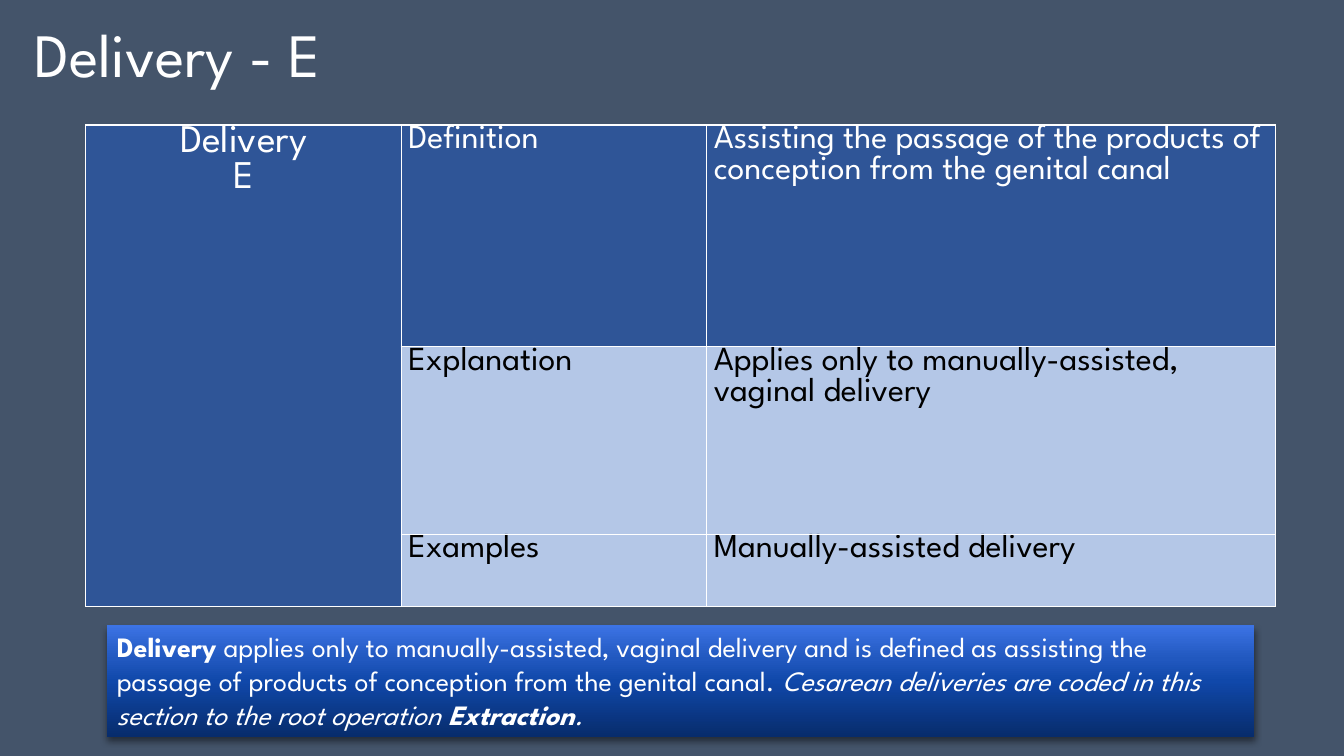
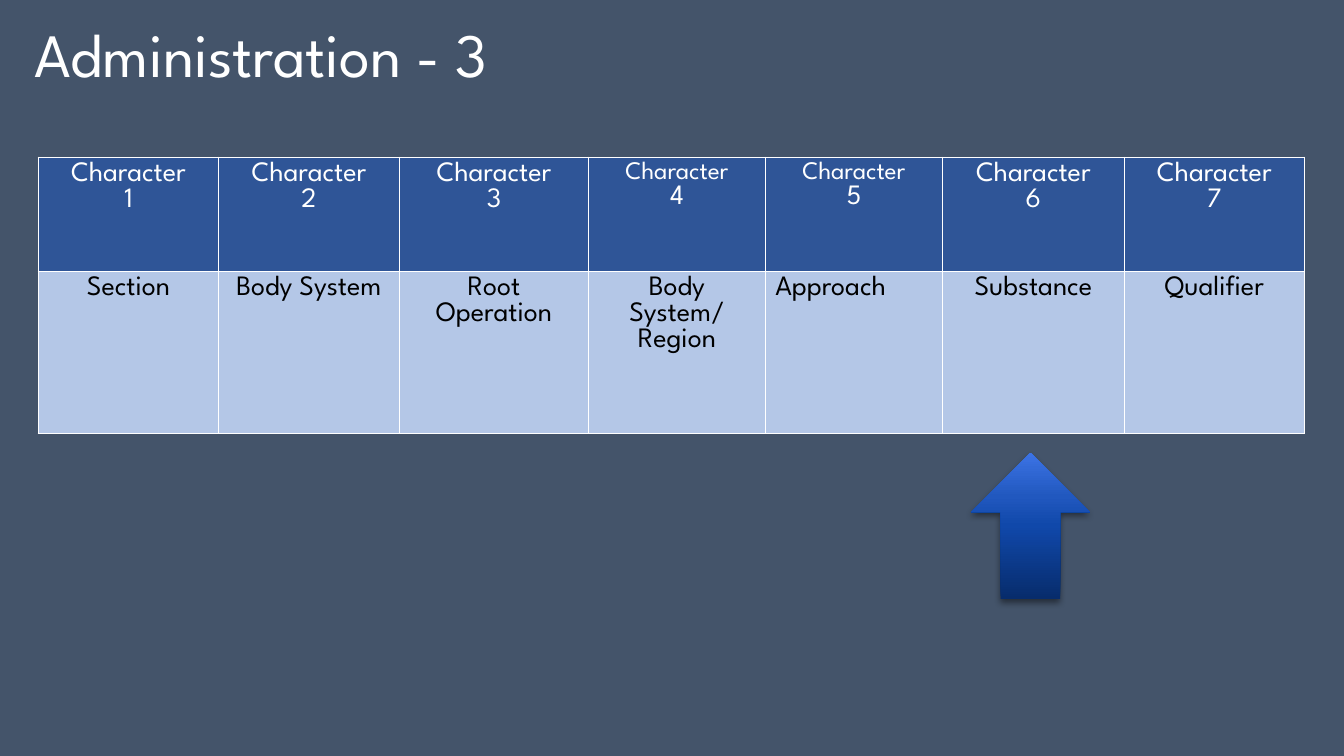
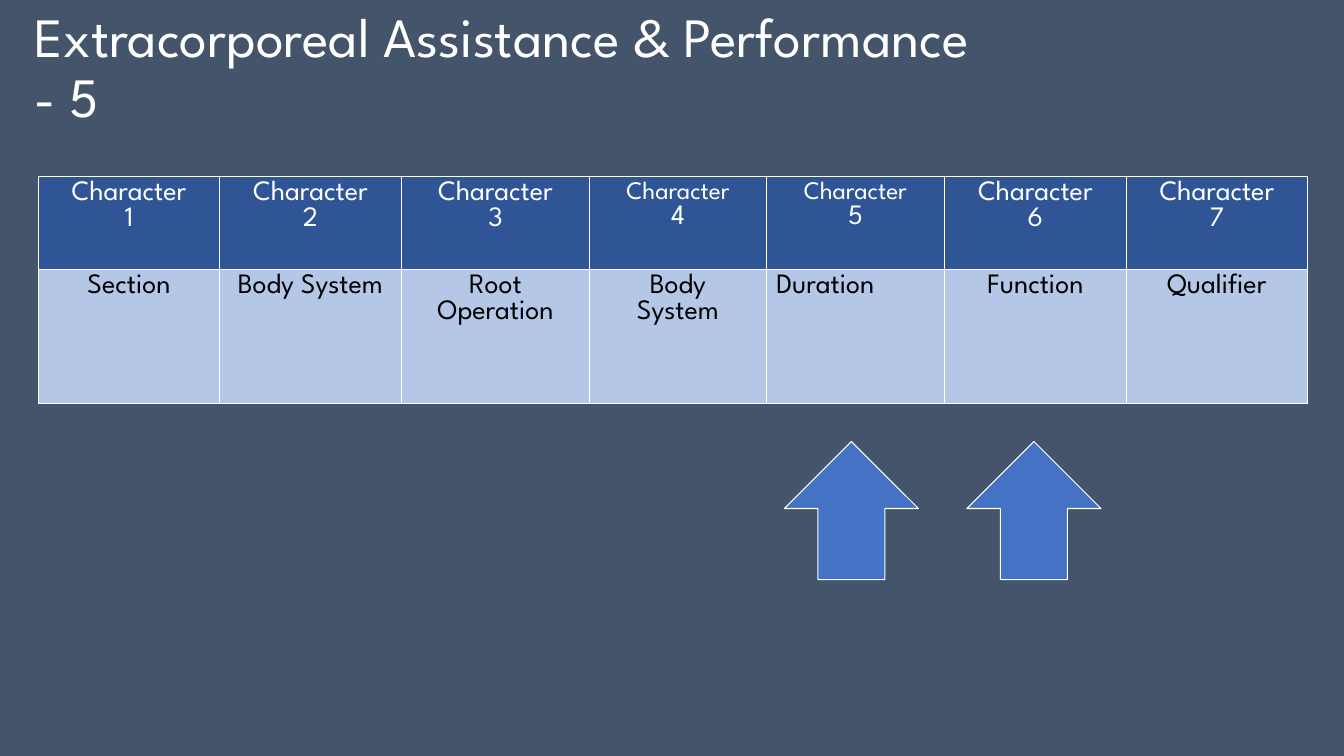
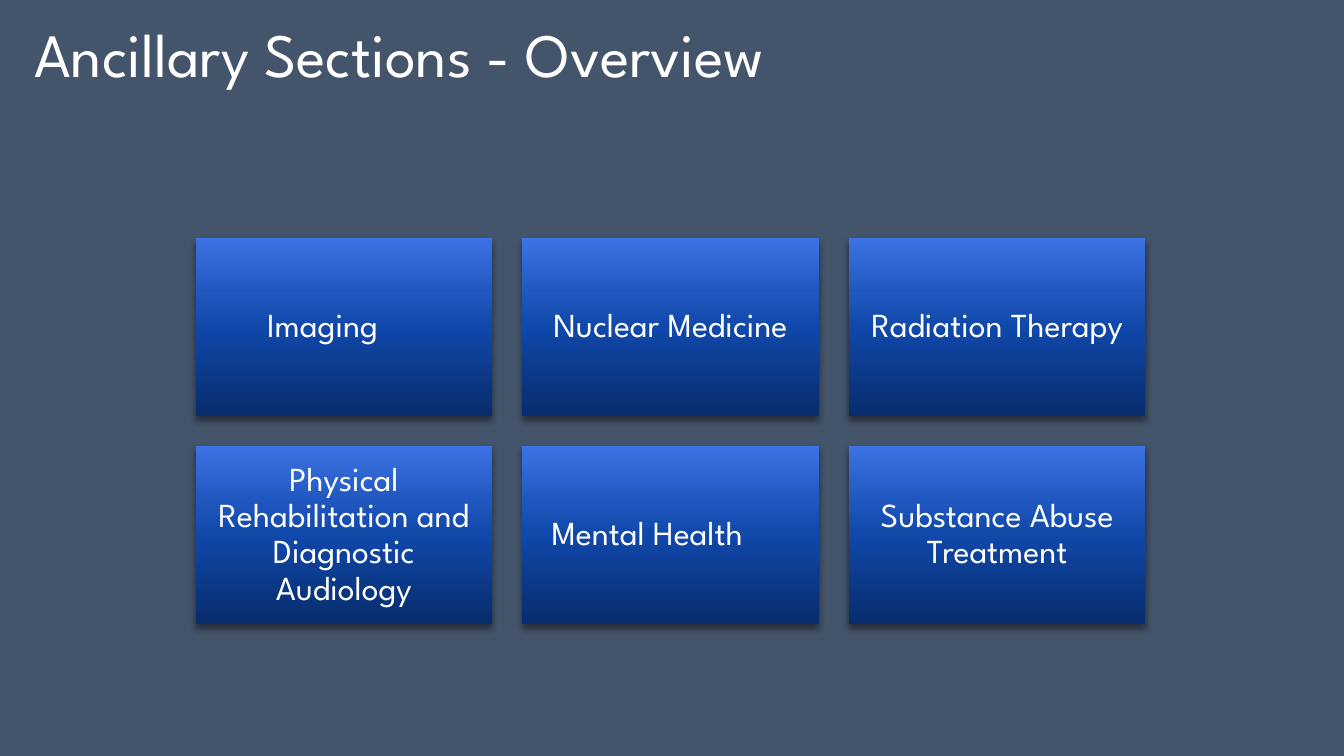
import dataclasses
import itertools
import typing

import lxml.etree
import pptx
import pptx.dml.color
import pptx.enum.shapes
import pptx.enum.text
import pptx.oxml
import pptx.oxml.ns
import pptx.util

PX = 9144
FONT = "League Spartan"
HUES = {
    "back": "44546A",
    "head": "2F5597",
    "body": "B4C7E7",
    "arrow": "4472C4",
    "white": "FFFFFF",
    "black": "000000",
}
GLOW = {0: "072C6C", 50: "1048AA", 70: "2158BF", 100: "3C73E5"}
TIGHT = 0.92
FORM = pptx.enum.shapes.MSO_SHAPE
ALIGN = pptx.enum.text.PP_ALIGN
ANCHOR = pptx.enum.text.MSO_ANCHOR
FIT = pptx.enum.text.MSO_AUTO_SIZE


@dataclasses.dataclass(frozen=True)
class Box:
    x: int
    y: int
    w: int
    h: int

    def emu(self) -> list[int]:
        return [side * PX for side in dataclasses.astuple(self)]


@dataclasses.dataclass(frozen=True)
class Run:
    text: str
    size: float
    hue: str = "white"
    bold: bool = False
    slant: bool = False


@dataclasses.dataclass(frozen=True)
class Cell:
    lines: tuple[Run, ...]
    fill: str
    align: typing.Any = ALIGN.CENTER


@dataclasses.dataclass(frozen=True)
class Card:
    text: str
    shift: int = 0


def tint(hue: str) -> pptx.dml.color.RGBColor:
    return pptx.dml.color.RGBColor.from_string(HUES[hue])


def node(tag: str, body: str, attrs: str = "") -> lxml.etree._Element:
    space = pptx.oxml.ns.nsdecls("a")
    return pptx.oxml.parse_xml(f"<a:{tag} {space} {attrs}>{body}</a:{tag}>")


def write(para, runs: typing.Iterable[Run], align=ALIGN.LEFT, gap=None) -> None:
    para.alignment = align
    if gap:
        para.line_spacing = gap
    for run in runs:
        part = para.add_run()
        part.text = run.text
        font = part.font
        font.name, font.size = FONT, pptx.util.Pt(run.size)
        font.bold, font.italic = run.bold, run.slant
        font.color.rgb = tint(run.hue)


def add_page(deck, title: str, size: float = 44, high: int = 91):
    page = deck.slides.add_slide(deck.slide_layouts[5])
    head = page.shapes.title
    head.left, head.top, head.width, head.height = Box(24, 12, 972, high).emu()
    frame = head.text_frame
    frame.word_wrap = True
    frame.auto_size = FIT.NONE
    frame.vertical_anchor = ANCHOR.MIDDLE
    write(frame.paragraphs[0], [Run(title, size)], gap=0.9)
    return page


def add_form(page, kind, box: Box):
    form = page.shapes.add_shape(kind, *box.emu())
    form.shadow.inherit = False
    return form


def add_glow(page, kind, box: Box):
    form = add_form(page, kind, box)
    form.line.fill.background()
    form.fill.background()
    props = form.fill._xPr
    stops = "".join(
        f'<a:gs pos="{spot * 1000}"><a:srgbClr val="{hue}"/></a:gs>'
        for spot, hue in GLOW.items()
    )
    blend = node("gradFill", f'<a:gsLst>{stops}</a:gsLst><a:lin ang="16200000" scaled="0"/>')
    props.replace(props.find(pptx.oxml.ns.qn("a:noFill")), blend)
    shade = node(
        "outerShdw",
        f'<a:srgbClr val="{HUES["black"]}"><a:alpha val="45000"/></a:srgbClr>',
        'blurRad="63500" dist="38100" dir="5400000" algn="ctr" rotWithShape="0"',
    )
    props.find(pptx.oxml.ns.qn("a:effectLst")).append(shade)
    return form


def style(spot, cell: Cell, pad: tuple[int, int]) -> None:
    spot.fill.solid()
    spot.fill.fore_color.rgb = tint(cell.fill)
    spot.margin_left = spot.margin_right = pad[0] * PX
    spot.margin_top = spot.margin_bottom = pad[1] * PX
    props = spot._tc.get_or_add_tcPr()
    line = f'<a:solidFill><a:srgbClr val="{HUES["white"]}"/></a:solidFill>'
    for rank, side in enumerate("LRTB"):
        props.insert(rank, node(f"ln{side}", line, 'w="12700"'))
    frame = spot.text_frame
    for rank, run in enumerate(cell.lines):
        para = frame.add_paragraph() if rank else frame.paragraphs[0]
        write(para, [run], cell.align, pptx.util.Pt(round(run.size * TIGHT, 2)))


def add_grid(page, x: int, y: int, cols: list[int], rows: list[int],
             cells: list[list[Cell]], pad: tuple[int, int]):
    box = Box(x, y, sum(cols), sum(rows))
    grid = page.shapes.add_table(len(rows), len(cols), *box.emu()).table
    for col, wide in zip(grid.columns, cols):
        col.width = wide * PX
    for row, high in zip(grid.rows, rows):
        row.height = high * PX
    for r, line in enumerate(cells):
        for c, cell in enumerate(line):
            style(grid.cell(r, c), cell, pad)
    return grid


def add_code(page, y: int, cols: list[int], rows: list[int], names: list[str]) -> None:
    top, low = [], []
    for rank, name in enumerate(names, 1):
        small = rank in (4, 5)
        top.append(Cell((Run("Character", 18 if small else 20), Run(str(rank), 20)), "head"))
        lines = tuple(Run(line, 20, "black") for line in name.split("|"))
        low.append(Cell(lines, "body", ALIGN.LEFT if rank == 5 else ALIGN.CENTER))
    add_grid(page, 38, y, cols, rows, [top, low], (10, 5))


def birth(deck) -> None:
    page = add_page(deck, "Delivery - E")
    facts = [
        ("Definition", "Assisting the passage of the products of conception from the genital canal"),
        ("Explanation", "Applies only to manually-assisted, vaginal delivery"),
        ("Examples", "Manually-assisted delivery"),
    ]
    cells = []
    for rank, fact in enumerate(facts):
        fill, hue = ("body", "black") if rank else ("head", "white")
        lead = () if rank else (Run("Delivery", 28), Run("E", 28))
        cells.append([Cell(lead, "head")] + [
            Cell((Run(text, 24, hue),), fill, ALIGN.LEFT) for text in fact
        ])
    grid = add_grid(page, 85, 124, [313, 303, 564], [220, 186, 70], cells, (7, 0))
    grid.cell(0, 0).merge(grid.cell(2, 0))
    note = add_glow(page, FORM.RECTANGLE, Box(106, 620, 1138, 111))
    frame = note.text_frame
    frame.word_wrap = True
    frame.auto_size = FIT.SHAPE_TO_FIT_TEXT
    frame.vertical_anchor = ANCHOR.TOP
    write(frame.paragraphs[0], [
        Run("Delivery", 20, bold=True),
        Run(" applies only to manually-assisted, vaginal delivery and is defined as assisting "
            "the passage of products of conception from the genital canal. ", 20),
        Run("Cesarean deliveries are coded in this section to the root operation ", 20, slant=True),
        Run("Extraction", 20, bold=True, slant=True),
        Run(".", 20, slant=True),
    ])


def dosing(deck) -> None:
    page = add_page(deck, "Administration - 3")
    add_code(page, 156, [179, 179, 188, 175, 176, 180, 179], [113, 161], [
        "Section", "Body System", "Root Operation", "Body|System/|Region",
        "Approach", "Substance", "Qualifier",
    ])
    add_glow(page, FORM.UP_ARROW, Box(963, 449, 118, 145))


def assist(deck) -> None:
    page = add_page(deck, "Extracorporeal Assistance & Performance - 5", 39.6, 114)
    add_code(page, 175, [180, 180, 187, 175, 177, 180, 180], [92, 133], [
        "Section", "Body System", "Root Operation", "Body|System",
        "Duration", "Function", "Qualifier",
    ])
    for x in (778, 959):
        arrow = add_form(page, FORM.UP_ARROW, Box(x, 438, 133, 137))
        arrow.fill.solid()
        arrow.fill.fore_color.rgb = tint("arrow")
        arrow.line.color.rgb = tint("white")
        arrow.line.width = pptx.util.Pt(0.75)


def survey(deck) -> None:
    page = add_page(deck, "Ancillary Sections - Overview")
    cards = [
        Card("Imaging", 42), Card("Nuclear Medicine"), Card("Radiation Therapy"),
        Card("Physical Rehabilitation and Diagnostic Audiology"),
        Card("Mental Health", 46), Card("Substance Abuse Treatment"),
    ]
    for (row, col), card in zip(itertools.product(range(2), range(3)), cards):
        box = Box(194 + col * 324, 236 + row * 206, 294, 177)
        frame = add_glow(page, FORM.RECTANGLE, box).text_frame
        frame.word_wrap = True
        frame.vertical_anchor = ANCHOR.MIDDLE
        frame.margin_left = frame.margin_top = frame.margin_bottom = 10 * PX
        frame.margin_right = (10 + card.shift) * PX
        write(frame.paragraphs[0], [Run(card.text, 24)], ALIGN.CENTER, 0.9)


def main() -> None:
    deck = pptx.Presentation()
    deck.slide_width, deck.slide_height = 1333 * PX, 750 * PX
    back = deck.slide_master.background.fill
    back.solid()
    back.fore_color.rgb = tint("back")
    for draw in (birth, dosing, assist, survey):
        draw(deck)
    deck.save("out.pptx")


if __name__ == "__main__":
    main()
